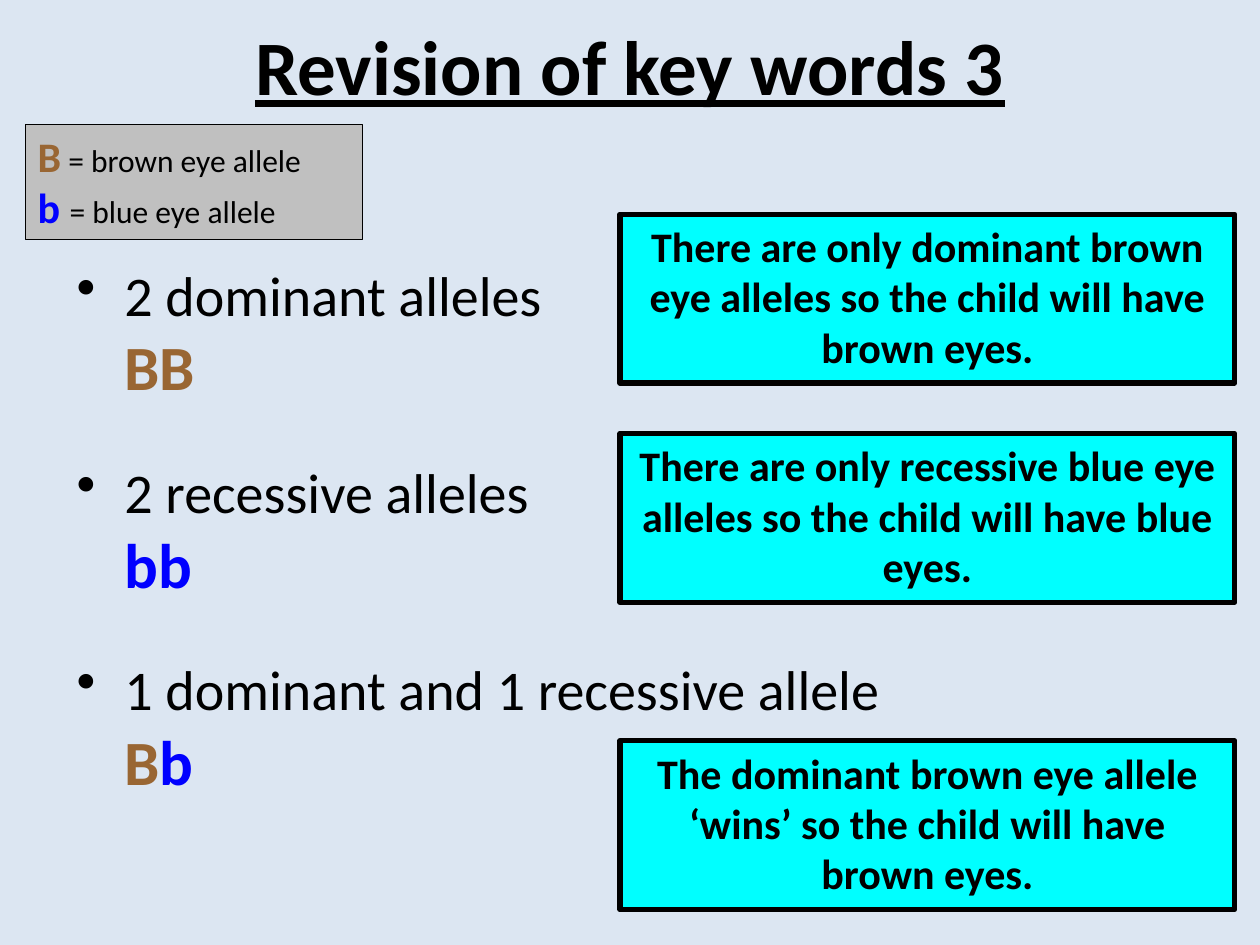
from dataclasses import dataclass
from typing import Any

from lxml import etree
from pptx import Presentation
from pptx import util as u
from pptx.dml.color import RGBColor
from pptx.enum import shapes, text
from pptx.oxml.ns import qn

BLACK, BROWN, BLUE = "000000", "996633", "0000FF"
GREY, CYAN, PALE = "C0C0C0", "00FFFF", "DCE6F2"


def colour(code):
    return RGBColor.from_string(code)


@dataclass
class Lesson:
    """Slide under construction together with its text style."""
    slide: Any
    face: str = "Calibri"

    def style(self, font, size, ink=BLACK, bold=False):
        font.name, font.size, font.bold = self.face, u.Pt(size), bold
        font.color.rgb = colour(ink)

    def run(self, paragraph, words, size, ink=BLACK, bold=False):
        part = paragraph.add_run()
        part.text = words
        self.style(part.font, size, ink, bold)

    def text_area(self, left, top, width, height):
        area = self.slide.shapes.add_textbox(*map(u.Inches, (left, top, width, height)))
        area.text_frame.word_wrap = True
        return area.text_frame

    def panel(self, left, top, width, height, fill, border):
        panel = self.slide.shapes.add_shape(
            shapes.MSO_SHAPE.RECTANGLE, *map(u.Inches, (left, top, width, height)))
        panel.shadow.inherit = False
        panel.fill.solid()
        panel.fill.fore_color.rgb = colour(fill)
        panel.line.color.rgb = colour(BLACK)
        panel.line.width = u.Pt(border)
        frame = panel.text_frame
        frame.word_wrap = True
        frame.vertical_anchor = text.MSO_ANCHOR.TOP
        return frame

    def title(self, words):
        frame = self.text_area(0.5, -0.11, 9, 1.25)
        frame.vertical_anchor = text.MSO_ANCHOR.MIDDLE
        heading = frame.paragraphs[0]
        heading.text = words
        heading.alignment = text.PP_ALIGN.CENTER
        self.style(heading.font, 44, bold=True)
        heading.font.underline = True

    def legend(self, entries):
        frame = self.panel(0.2, 0.99, 2.68, 0.91, GREY, 0.75)
        for index, (letter, ink, meaning) in enumerate(entries):
            entry = frame.add_paragraph() if index else frame.paragraphs[0]
            entry.alignment = text.PP_ALIGN.LEFT
            self.run(entry, letter, 24, ink, True)
            self.run(entry, meaning, 18)

    def genotypes(self, entries):
        frame = self.text_area(0.51, 2.02, 9, 4.68)
        for index, (description, letters) in enumerate(entries):
            bullet = frame.add_paragraph() if index else frame.paragraphs[0]
            bullet.text = description
            self.indent(bullet, -0.38)
            etree.SubElement(bullet._p.get_or_add_pPr(), qn("a:buChar"), char="•")
            self.style(bullet.font, 32)
            if index:
                bullet.space_before = u.Pt(31)
            genotype = frame.add_paragraph()
            self.indent(genotype, 0)
            for letter, ink in letters:
                self.run(genotype, letter, 36, ink, True)

    def indent(self, paragraph, first_line):
        properties = paragraph._p.get_or_add_pPr()
        properties.set("marL", str(u.Inches(0.38)))
        properties.set("indent", str(u.Inches(first_line)))

    def outcome(self, top, words):
        answer = self.panel(4.92, top, 4.88, 1.34, CYAN, 3).paragraphs[0]
        answer.text = words
        answer.alignment = text.PP_ALIGN.CENTER
        self.style(answer.font, 24, bold=True)


def main():
    deck = Presentation()
    deck.slide_width, deck.slide_height = u.Inches(10), u.Inches(7.5)
    lesson = Lesson(deck.slides.add_slide(deck.slide_layouts[6]))
    backdrop = lesson.slide.background.fill
    backdrop.solid()
    backdrop.fore_color.rgb = colour(PALE)

    lesson.title("Revision of key words 3")
    lesson.genotypes([
        ("2 dominant alleles", [("BB", BROWN)]),
        ("2 recessive alleles", [("bb", BLUE)]),
        ("1 dominant and 1 recessive allele", [("B", BROWN), ("b", BLUE)]),
    ])
    lesson.legend([
        ("B", BROWN, " = brown eye allele"),
        ("b ", BLUE, "= blue eye allele"),
    ])
    for top, words in [
        (1.7, "There are only dominant brown eye alleles so the child will have brown eyes."),
        (3.44, "There are only recessive blue eye alleles so the child will have blue eyes."),
        (5.88, "The dominant brown eye allele ‘wins’ so the child will have brown eyes."),
    ]:
        lesson.outcome(top, words)
    deck.save("out.pptx")


if __name__ == "__main__":
    main()
